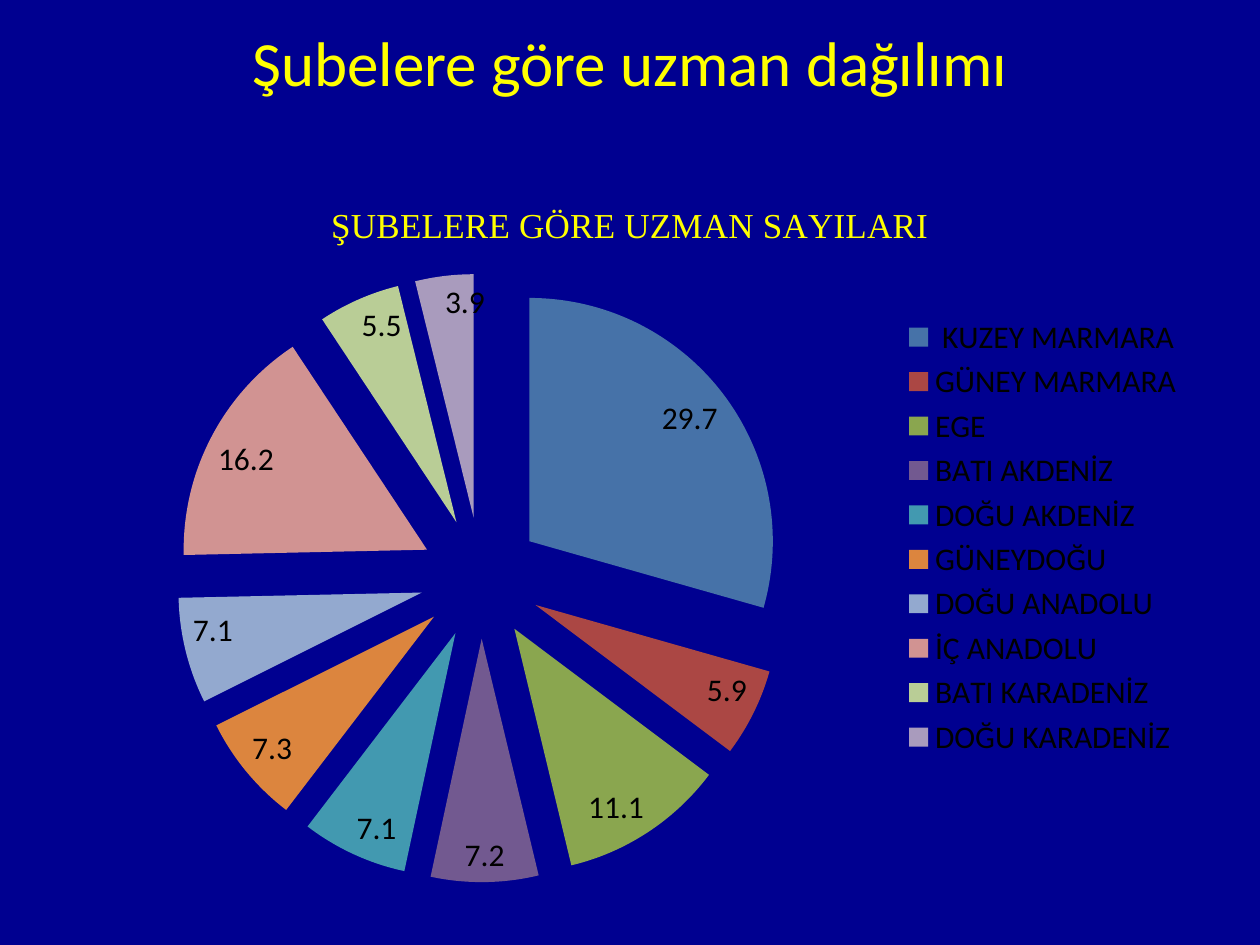
import pptx
import pptx.chart.data
import pptx.dml.color
import pptx.enum.chart
import pptx.enum.text
import pptx.oxml
import pptx.oxml.ns
import pptx.util

HUES = {
    "back": "000090", "head": "FFFF00", "text": "000000",
}
# branch: (experts, slice colour)
DATA = {
    " KUZEY MARMARA": (29.7, "4672A8"),
    "GÜNEY MARMARA": (5.9, "AB4744"),
    "EGE": (11.1, "8AA64F"),
    "BATI AKDENİZ": (7.2, "725990"),
    "DOĞU AKDENİZ": (7.1, "4299B0"),
    "GÜNEYDOĞU": (7.3, "DC853E"),
    "DOĞU ANADOLU": (7.1, "93A9CF"),
    "İÇ ANADOLU": (16.2, "D19392"),
    "BATI KARADENİZ": (5.5, "B9CD96"),
    "DOĞU KARADENİZ": (3.9, "A99BBD"),
}
BURST = 25


def paint(fill, hue):
    fill.solid()
    fill.fore_color.rgb = pptx.dml.color.RGBColor.from_string(hue)


def style(font, size, name, hue):
    form = {"size": pptx.util.Pt(size), "name": name, "bold": False}
    for key, val in form.items():
        setattr(font, key, val)
    paint(font.fill, hue)


deck = pptx.Presentation()
deck.slide_width = wide = pptx.util.Inches(10)
deck.slide_height = high = pptx.util.Inches(7.5)
slide = deck.slides.add_slide(deck.slide_layouts[5])
paint(slide.background.fill, HUES["back"])

# Slide title
title = slide.shapes.title
place = {"left": 0.05 * wide, "top": 0.017 * high,
         "width": 0.9 * wide, "height": 0.095 * high}
for key, val in place.items():
    setattr(title, key, int(val))
frame = title.text_frame
frame.text = "Şubelere göre uzman dağılımı"
frame.vertical_anchor = pptx.enum.text.MSO_ANCHOR.MIDDLE
frame.paragraphs[0].alignment = pptx.enum.text.PP_ALIGN.CENTER
style(frame.paragraphs[0].runs[0].font, 36, "Calibri", HUES["head"])

# Pie of experts per branch
data = pptx.chart.data.CategoryChartData(number_format="0.0")
data.categories = list(DATA)
data.add_series("Series 1", [count for count, hue in DATA.values()])
chart = slide.shapes.add_chart(
    pptx.enum.chart.XL_CHART_TYPE.PIE,
    int(0.05 * wide), int(0.185 * high),
    int(0.9 * wide), int(0.767 * high), data).chart
style(chart.font, 18, "Calibri", HUES["text"])

chart.has_title = True
head = chart.chart_title.text_frame
head.text = "ŞUBELERE GÖRE UZMAN SAYILARI"
style(head.paragraphs[0].runs[0].font, 20, "Times New Roman", HUES["head"])
chart.chart_title.include_in_layout = False

chart.has_legend = True
chart.legend.position = pptx.enum.chart.XL_LEGEND_POSITION.RIGHT
chart.legend.include_in_layout = False

plot = chart.plots[0]
plot.vary_by_categories = True
plot.has_data_labels = True
form = {"show_value": True, "show_percentage": False,
        "number_format": "0.0", "number_format_is_linked": False,
        "position": pptx.enum.chart.XL_LABEL_POSITION.INSIDE_END}
for key, val in form.items():
    setattr(plot.data_labels, key, val)
style(plot.data_labels.font, 18, "Calibri", HUES["text"])

pie = plot.series[0]
for num, (count, hue) in enumerate(DATA.values()):
    paint(pie.points[num].format.fill, hue)
for shape in pie.format.fill._xPr.getparent().xpath("c:dPt/c:spPr"):
    space = pptx.oxml.ns.nsdecls("c")
    shape.addprevious(pptx.oxml.parse_xml(
        f'<c:explosion {space} val="{BURST}"/>'))

deck.save("out.pptx")
